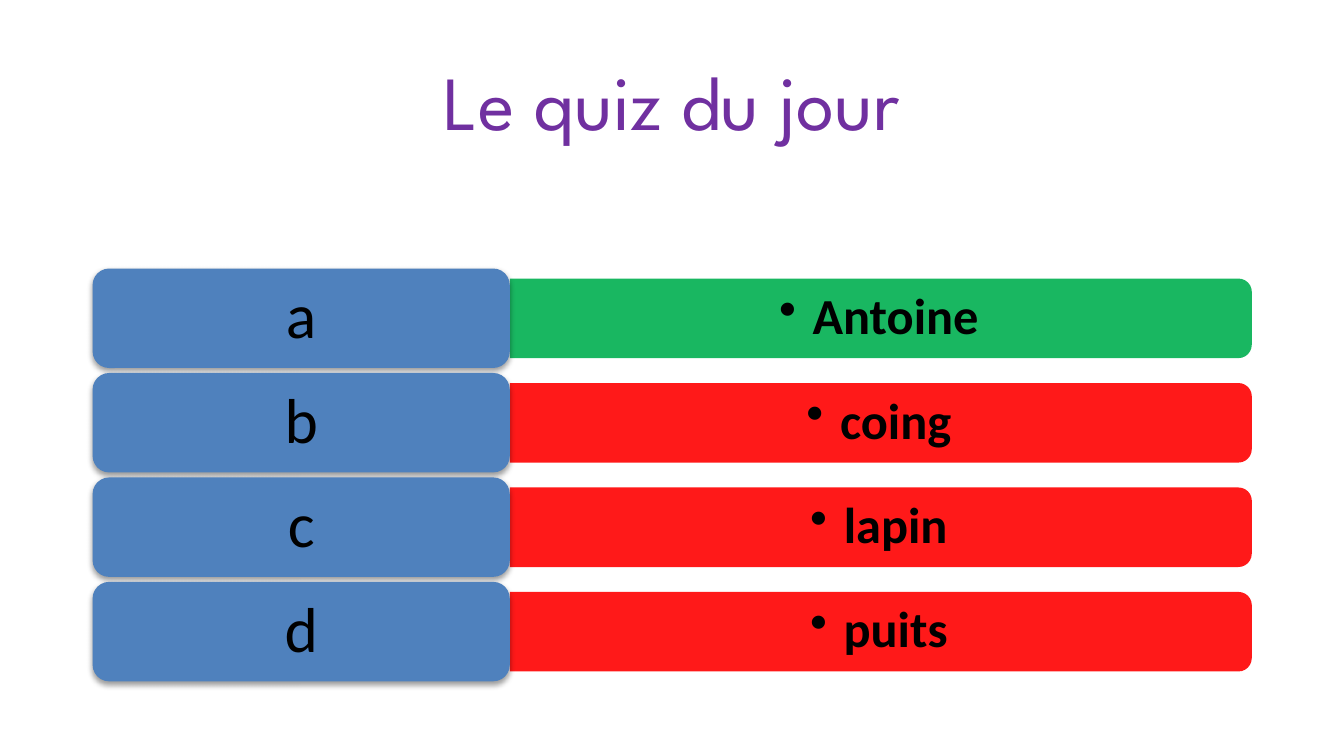
from lxml import etree
from pptx import Presentation
from pptx.dml.color import RGBColor
from pptx.enum import shapes, text
from pptx.oxml.ns import qn
from pptx.util import Pt


def color(code):
    return RGBColor.from_string(code)


def add(node, tag, **attrs):
    """Append a DrawingML child element and return it."""
    return etree.SubElement(node, qn("a:" + tag), {k: str(v) for k, v in attrs.items()})


class Quiz:
    font = "Calibri"
    ink = "000000"
    blue = "4F81BD"

    def __init__(self, slide):
        self.slide = slide

    def letter(self, shape, words, size, pad, font=None, ink=None, bold=False):
        """Put one centred paragraph in a shape and return it."""
        frame = shape.text_frame
        frame.word_wrap = True
        frame.vertical_anchor = text.MSO_ANCHOR.MIDDLE
        frame.margin_left = frame.margin_right = Pt(pad)
        frame.margin_top = frame.margin_bottom = Pt(pad / 2)
        para = frame.paragraphs[0]
        para.text = words
        para.alignment = text.PP_ALIGN.CENTER
        para.line_spacing = 0.9
        para.font.name = font or self.font
        para.font.size = Pt(size)
        para.font.bold = bold
        para.font.color.rgb = color(ink or self.ink)
        return para

    def box(self, x, y, w, h):
        return self.slide.shapes.add_textbox(Pt(x), Pt(y), Pt(w), Pt(h))

    def shape(self, kind, x, y, w, h, fill):
        item = self.slide.shapes.add_shape(kind, Pt(x), Pt(y), Pt(w), Pt(h))
        item.shadow.inherit = False
        item.fill.solid()
        item.fill.fore_color.rgb = color(fill)
        item.line.fill.background()
        return item

    def title(self, words, x, y, w, h):
        para = self.letter(self.box(x, y, w, h), words, 41, 7.2, "League Spartan", "7030A0")
        para.line_spacing = 1.0

    def answer(self, words, x, y, w, h, fill):
        # The bar is a tall shape turned a quarter, so its round corners face right.
        kind = shapes.MSO_SHAPE.ROUND_2_SAME_RECTANGLE
        bar = self.shape(kind, x + (w - h) / 2, y + (h - w) / 2, h, w, fill)
        bar.rotation = 90
        add(bar._element.spPr.find(".//" + qn("a:srgbClr")), "alpha", val=90000)
        para = self.letter(self.box(x, y + 2, w - 2, h - 4), words, 27, 8, bold=True)
        props = para._p.get_or_add_pPr()
        props.set("marL", str(Pt(18)))
        props.set("indent", str(-Pt(18)))
        bullet = add(props, "buChar", char="•")
        props.find(qn("a:lnSpc")).addnext(bullet)

    def label(self, words, x, y, w, h):
        item = self.shape(shapes.MSO_SHAPE.ROUNDED_RECTANGLE, x, y, w, h, self.blue)
        effects = item._element.spPr.find(qn("a:effectLst"))
        shadow = add(effects, "outerShdw", blurRad=Pt(3.1), dist=Pt(1.6),
                     dir=5400000, rotWithShape=0)
        add(add(shadow, "srgbClr", val=self.ink), "alpha", val=38000)
        self.letter(item, words, 34, 10)


def main():
    deck = Presentation()
    deck.slide_width, deck.slide_height = Pt(720), Pt(405)
    quiz = Quiz(deck.slides.add_slide(deck.slide_layouts[6]))

    left, top, step = 49.6, 143.9, 55.95
    wide, tall = 223.5, 53.3
    reach, thin = 397.5, 42.6
    green, red = "00B050", "FF0000"
    rows = [("a", "Antoine", green), ("b", "coing", red),
            ("c", "lapin", red), ("d", "puits", red)]

    quiz.title("Le quiz du jour", left, 14.4, wide + reach, 78.5)
    for i, (mark, word, fill) in enumerate(rows):
        y = top + i * step
        quiz.answer(word, left + wide, y + (tall - thin) / 2, reach, thin, fill)
        quiz.label(mark, left, y, wide, tall)

    deck.save("out.pptx")


if __name__ == "__main__":
    main()
